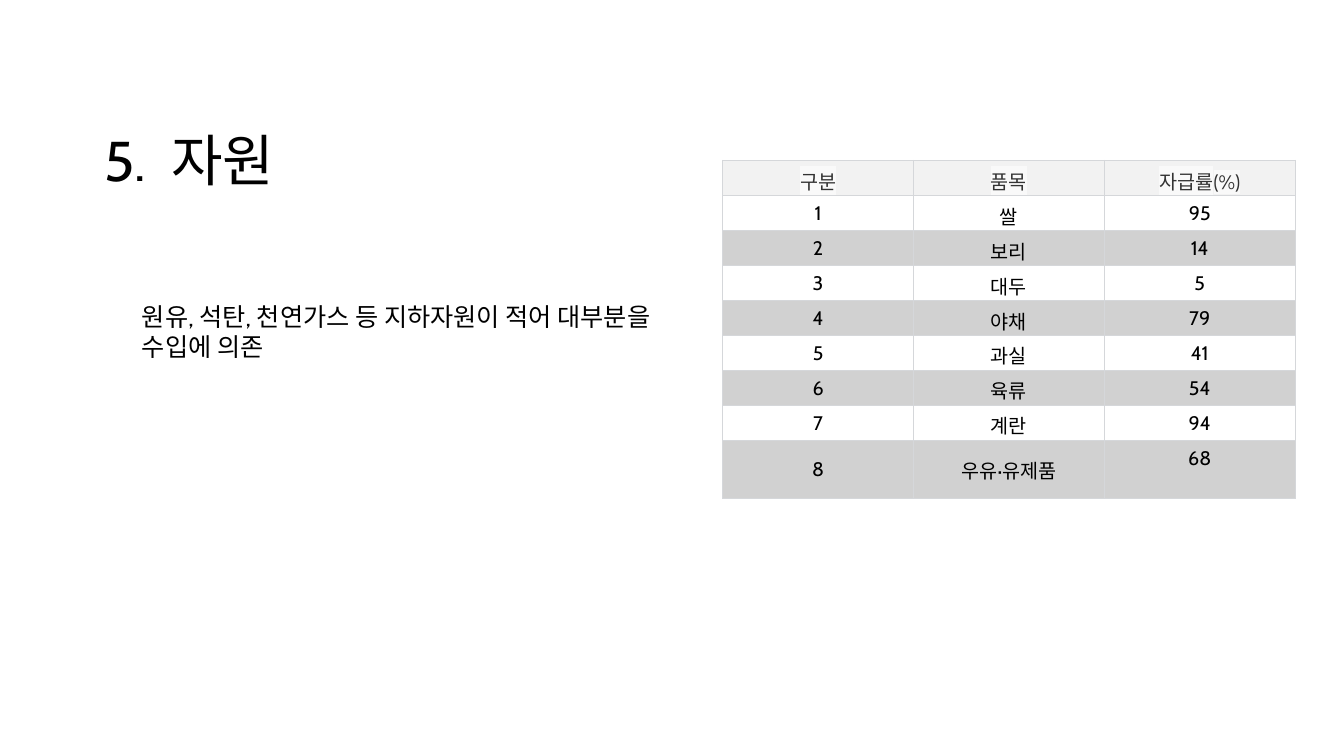
from pptx import Presentation
from pptx.dml import color
from pptx.enum import text
from pptx.oxml import ns, xmlchemy
from pptx.util import Pt

FONT = "Cabin"
ITEMS = ["쌀", "보리", "대두", "야채", "과실", "육류", "계란", "우유·유제품"]
RATES = [95, 14, 5, 79, 41, 54, 94, 68]
HEADINGS = ["구분", "품목", "자급률(%)"]
ROW_HEIGHT, LAST_ROW_HEIGHT = 25, 42


def rgb(value):
    """Return a colour from a hex string."""
    return color.RGBColor.from_string(value)


def style_span(span, size, ink="000000"):
    """Give a run its font, size and colour."""
    span.font.name = FONT
    span.font.size = Pt(size)
    span.font.color.rgb = rgb(ink)


def highlight(span, shade):
    """Put a highlight colour behind a run."""
    mark = xmlchemy.OxmlElement("a:highlight")
    xmlchemy_color = xmlchemy.OxmlElement("a:srgbClr")
    xmlchemy_color.set("val", shade)
    mark.append(xmlchemy_color)
    span.font._element.find(ns.qn("a:solidFill")).addnext(mark)


def add_text(page, words, left, top, width, height, size):
    """Add a wrapped text box."""
    box = page.shapes.add_textbox(Pt(left), Pt(top), Pt(width), Pt(height))
    box.text_frame.word_wrap = True
    box.text_frame.auto_size = text.MSO_AUTO_SIZE.SHAPE_TO_FIT_TEXT
    box.text_frame.text = words
    style_span(box.text_frame.paragraphs[0].runs[0], size)


def add_borders(cell, shade, width):
    """Draw the four borders of a cell."""
    properties = cell._tc.get_or_add_tcPr()
    for position, side in enumerate(("lnL", "lnR", "lnT", "lnB")):
        line = xmlchemy.OxmlElement(f"a:{side}")
        line.set("w", str(Pt(width)))
        fill = xmlchemy.OxmlElement("a:solidFill")
        tint = xmlchemy.OxmlElement("a:srgbClr")
        tint.set("val", shade)
        fill.append(tint)
        line.append(fill)
        properties.insert(position, line)


def fill_cell(cell, words, shade, ink="000000"):
    """Write a centred cell with a border and return its run."""
    cell.text = words
    cell.vertical_anchor = text.MSO_ANCHOR.MIDDLE
    cell.margin_left = cell.margin_right = Pt(5.76)
    cell.margin_top, cell.margin_bottom = Pt(4.32), Pt(3.6)
    if shade:
        cell.fill.solid()
        cell.fill.fore_color.rgb = rgb(shade)
    else:
        cell.fill.background()
    add_borders(cell, "D5D7DA", 0.75)
    para = cell.text_frame.paragraphs[0]
    para.alignment = text.PP_ALIGN.CENTER
    style_span(para.runs[0], 14, ink)
    return para.runs[0]


def add_rate_table(page, left, top, width):
    """Add the table of self-sufficiency rates."""
    height = ROW_HEIGHT * len(ITEMS) + LAST_ROW_HEIGHT
    table = page.shapes.add_table(
        len(ITEMS) + 1, len(HEADINGS), Pt(left), Pt(top), Pt(width), Pt(height)
    ).table
    table.first_row = table.horz_banding = False
    for row in table.rows:
        row.height = Pt(ROW_HEIGHT)
    table.rows[len(ITEMS)].height = Pt(LAST_ROW_HEIGHT)
    for column, heading in enumerate(HEADINGS):
        span = fill_cell(table.cell(0, column), heading, "F2F2F2", "333333")
        highlight(span, "F9F9F9")
    for number, (item, rate) in enumerate(zip(ITEMS, RATES), start=1):
        shade = "D1D1D1" if number % 2 == 0 else None
        for column, value in enumerate((number, item, rate)):
            fill_cell(table.cell(number, column), str(value), shade)
    table.cell(len(ITEMS), 2).margin_bottom = Pt(19.5)


def main():
    """Build the slide and save it."""
    deck = Presentation()
    deck.slide_width, deck.slide_height = Pt(960), Pt(540)
    page = deck.slides.add_slide(deck.slide_layouts[6])
    add_text(page, "5.  자원", 67.7, 86.4, 198, 55.4, 40)
    add_text(page, "원유, 석탄, 천연가스 등 지하자원이 적어 대부분을 수입에 의존",
             94.3, 211.7, 379.4, 72.7, 18)
    add_rate_table(page, 516.2, 114.5, 409)
    deck.save("out.pptx")


if __name__ == "__main__":
    main()
